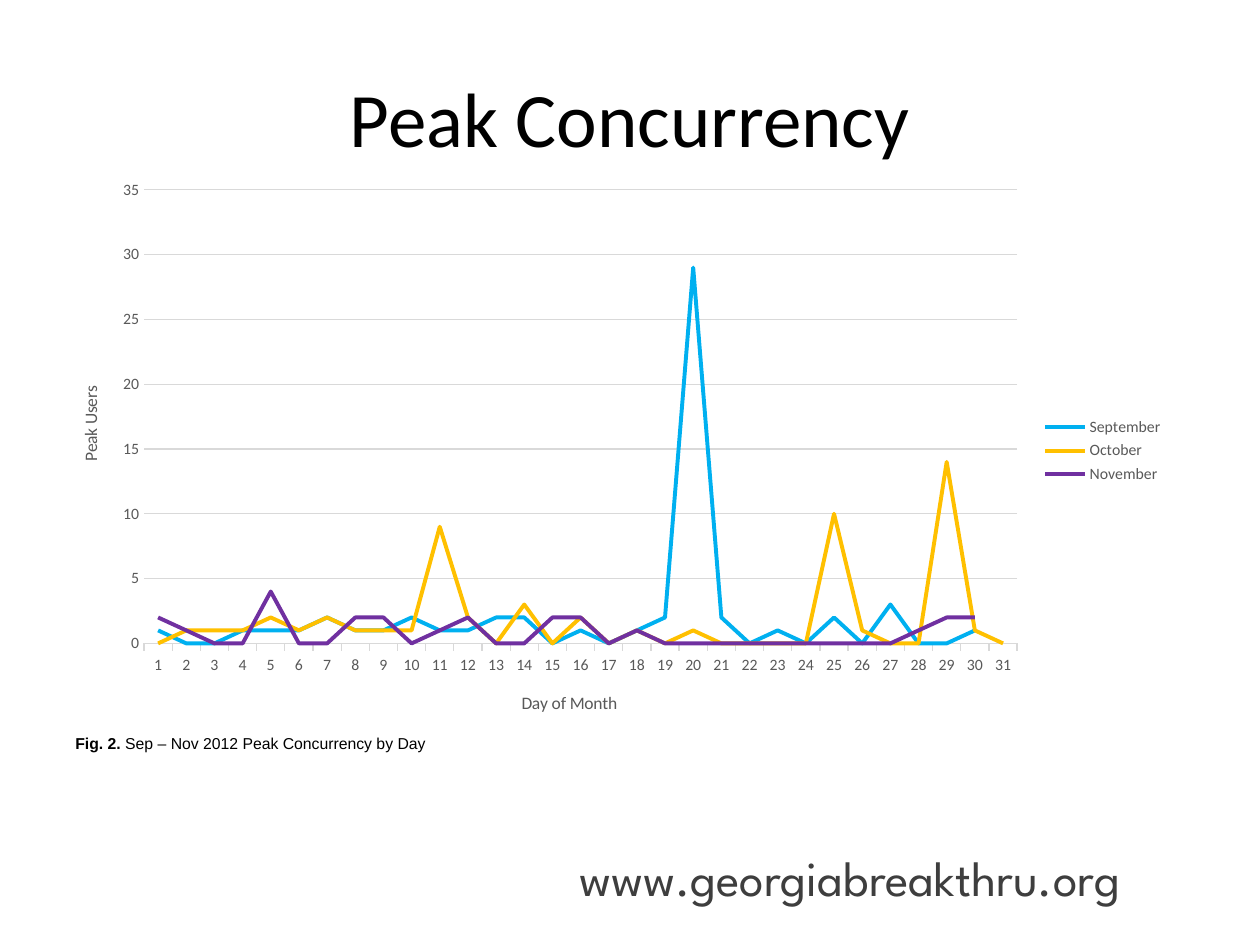
"""Build the Peak Concurrency slide with its daily line chart."""
from lxml import etree
from pptx import Presentation
from pptx.chart.data import CategoryChartData
from pptx.dml.color import RGBColor
from pptx.enum.chart import XL_CHART_TYPE, XL_LEGEND_POSITION, XL_TICK_MARK
from pptx.enum.text import MSO_ANCHOR, PP_ALIGN
from pptx.oxml.ns import qn
from pptx.util import Inches, Pt

LINE = XL_CHART_TYPE.LINE
RIGHT = XL_LEGEND_POSITION.RIGHT
NO_TICK, OUTSIDE = XL_TICK_MARK.NONE, XL_TICK_MARK.OUTSIDE
TOP, MIDDLE = MSO_ANCHOR.TOP, MSO_ANCHOR.MIDDLE
CENTER = PP_ALIGN.CENTER

THEME = {
    "title": ("Calibri", 44, "000000"),
    "site": ("League Spartan", 28, "3E3E3E"),
    "caption": ("Arial", 9, "000000"),
    "axis title": ("Calibri", 10, "595959"),
    "label": ("Calibri", 9, "595959"),
    "grid": "D9D9D9",
    "grid width": Pt(0.75),
    "series width": Pt(2.25),
}
MONTHS = [
    ("September", "00B0F0", [1, 0, 0, 1, 1, 1, 2, 1, 1, 2, 1, 1, 2, 2, 0,
                             1, 0, 1, 2, 29, 2, 0, 1, 0, 2, 0, 3, 0, 0, 1]),
    ("October", "FFC000", [0, 1, 1, 1, 2, 1, 2, 1, 1, 1, 9, 2, 0, 3, 0, 2,
                           0, 1, 0, 1, 0, 0, 0, 0, 10, 1, 0, 0, 14, 1, 0]),
    ("November", "7030A0", [2, 1, 0, 0, 4, 0, 0, 2, 2, 0, 1, 2, 0, 0, 2,
                            2, 0, 1, 0, 0, 0, 0, 0, 0, 0, 0, 0, 1, 2, 2]),
]


def style(font, role):
    name, size, color = THEME[role]
    font.name, font.size, font.bold = name, Pt(size), False
    font.color.rgb = RGBColor.from_string(color)


def place(parent, index, **settings):
    for old in parent.findall(qn("c:layout")):
        parent.remove(old)
    layout = etree.Element(qn("c:layout"))
    manual = etree.SubElement(layout, qn("c:manualLayout"))
    for tag, value in settings.items():
        etree.SubElement(manual, qn(f"c:{tag}")).set("val", str(value))
    parent.insert(index, layout)


deck = Presentation()
deck.slide_width, deck.slide_height = Inches(10), Inches(7.5)
width, height = deck.slide_width, deck.slide_height
page = deck.slides.add_slide(deck.slide_layouts[5])

title = page.shapes.title
title.left, title.top = int(width * 0.05), int(height * 0.04)
title.width, title.height = int(width * 0.9), int(height / 6)
title.text_frame.text = "Peak Concurrency"
title.text_frame.vertical_anchor = MIDDLE
para = title.text_frame.paragraphs[0]
para.alignment = CENTER
style(para.font, "title")

for role, left, top, wide, high, spans in [
    ("site", 0.45, 0.89, 0.53, 0.05, ["www.georgiabreakthru.org"]),
    ("caption", 0.05, 0.77, 0.95, 0.07,
     ["Fig. 2.", " Sep – Nov 2012 Peak Concurrency by Day"]),
]:
    box = page.shapes.add_textbox(int(width * left), int(height * top),
                                  int(width * wide), int(height * high))
    box.text_frame.word_wrap = True
    box.text_frame.vertical_anchor = TOP
    para = box.text_frame.paragraphs[0]
    style(para.font, role)
    for text in spans:
        span = para.add_run()
        span.text = text
        span.font.bold = text == "Fig. 2."

days = range(1, 32)
data = CategoryChartData()
data.categories = [str(day) for day in days]
for month, color, peaks in MONTHS:
    data.add_series(month, peaks + [None] * (len(days) - len(peaks)))
chart = page.shapes.add_chart(LINE, int(width / 30), int(height * 0.177),
                              int(width * 0.9), int(height * 0.6), data).chart
chart.has_title = False
style(chart.font, "label")
chart.has_legend = True
chart.legend.position = RIGHT
chart.legend.include_in_layout = False
style(chart.legend.font, "label")
chart.plots[0].vary_by_categories = False

for series, (month, color, peaks) in zip(chart.plots[0].series, MONTHS):
    series.smooth = False
    series.format.line.width = THEME["series width"]
    series.format.line.color.rgb = RGBColor.from_string(color)

days_axis, users_axis = chart.category_axis, chart.value_axis
users_axis.minimum_scale, users_axis.maximum_scale = 0, 35
users_axis.major_unit = 5
users_axis.has_major_gridlines = True
for axis, name, tick, x, y in [
    (days_axis, "Day of Month", OUTSIDE, 0.42, 0.92),
    (users_axis, "Peak Users", NO_TICK, 0.03, 0.38),
]:
    axis.major_tick_mark, axis.minor_tick_mark = tick, NO_TICK
    style(axis.tick_labels.font, "label")
    frame = axis.axis_title.text_frame
    frame.text = name
    style(frame.paragraphs[0].font, "axis title")
    place(axis.axis_title._element, 1, xMode="edge", yMode="edge", x=x, y=y)
users_axis.format.line.fill.background()
for line in (days_axis.format.line, users_axis.major_gridlines.format.line):
    line.width = THEME["grid width"]
    line.color.rgb = RGBColor.from_string(THEME["grid"])

plot_area = chart.element.find(f".//{qn('c:plotArea')}") if hasattr(chart, "element") \
    else days_axis._element.getparent()
place(plot_area, 0, layoutTarget="inner", xMode="edge", yMode="edge",
      x=0.09, y=0.04, w=0.77, h=0.8)

deck.save("out.pptx")
